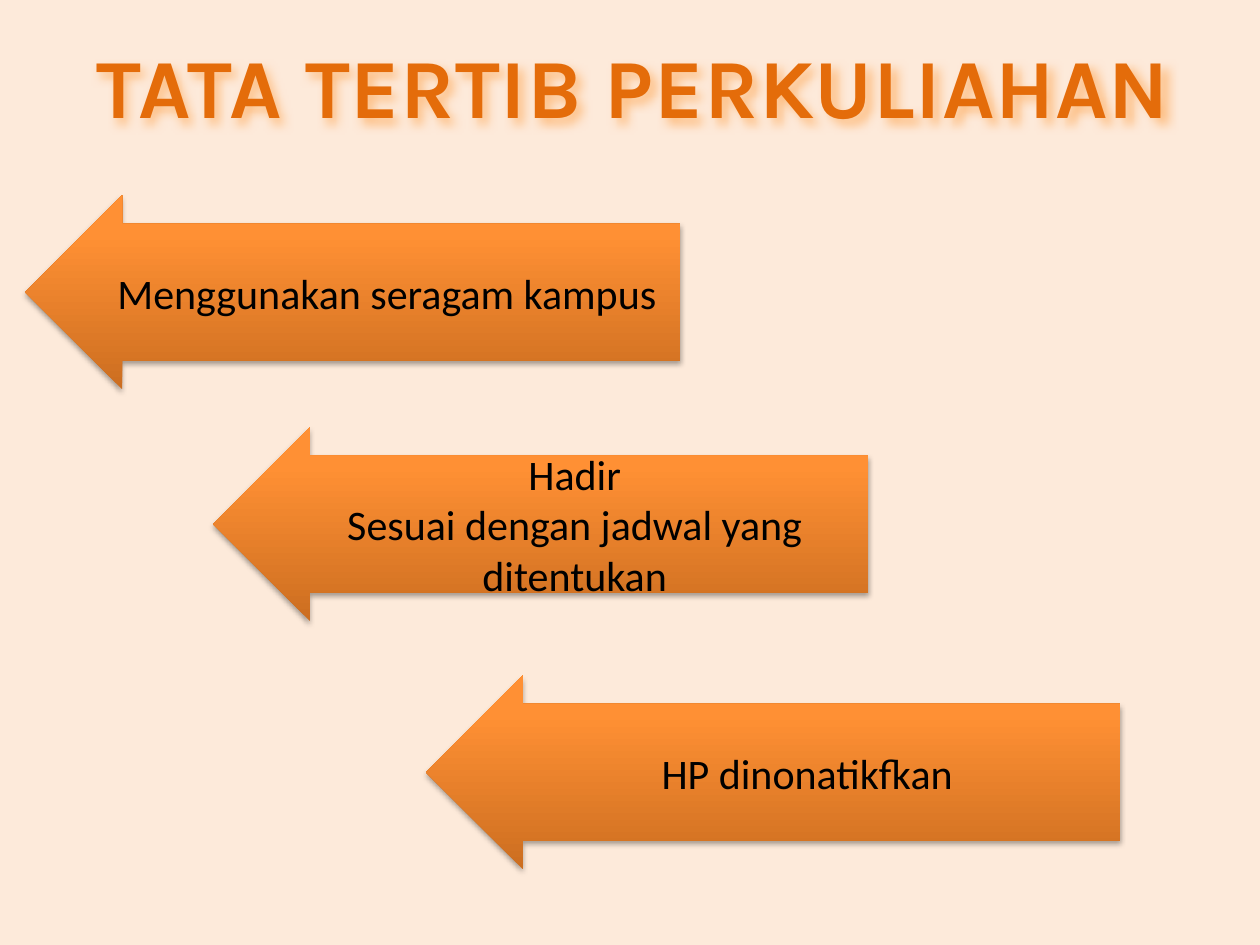
import dataclasses

import pptx
import pptx.dml.color
import pptx.enum.shapes
import pptx.enum.text
import pptx.oxml
import pptx.oxml.ns
import pptx.util

Inches = pptx.util.Inches
Pt = pptx.util.Pt


@dataclasses.dataclass(frozen=True)
class Theme:
    """Colours, fonts and type sizes of the slide."""
    background: str = "FDEADA"
    title: str = "E46C0A"
    title_glow: str = "FFB066"
    text: str = "000000"
    shadow: str = "000000"
    gradient: tuple = ((0, "CC6E20"), (80, "FF9034"), (100, "FF9136"))
    title_font: str = "Karla"
    body_font: str = "Calibri"
    title_size: int = 48
    body_size: int = 24


THEME = Theme()
RULES = (
    ((0.2, 1.55, 5.2, 1.54), "Menggunakan seragam kampus"),
    ((1.69, 3.39, 5.2, 1.54), "Hadir\nSesuai dengan jadwal yang ditentukan"),
    ((3.38, 5.36, 5.51, 1.54), "HP dinonatikfkan"),
)


def rgb(value):
    """Return a colour from its hex value."""
    return pptx.dml.color.RGBColor.from_string(value)


def add_effect(sp, color, alpha, blur, dist, angle):
    """Give a shape an outer shadow, with lengths in points."""
    sp.shadow.inherit = False
    effects = sp._element.spPr.find(pptx.oxml.ns.qn("a:effectLst"))
    effects.append(pptx.oxml.parse_xml(
        f'<a:outerShdw {pptx.oxml.ns.nsdecls("a")} blurRad="{Pt(blur)}" '
        f'dist="{Pt(dist)}" dir="{angle * 60000}" rotWithShape="0">'
        f'<a:srgbClr val="{color}"><a:alpha val="{alpha * 1000}"/></a:srgbClr>'
        '</a:outerShdw>'))


def fill_gradient(sp, stops, angle):
    """Fill a shape with a linear gradient."""
    sp.fill.gradient()
    grad = sp._element.spPr.find(pptx.oxml.ns.qn("a:gradFill"))
    marks = "".join(f'<a:gs pos="{pos * 1000}"><a:srgbClr val="{color}"/></a:gs>'
                    for pos, color in stops)
    grad.getparent().replace(grad, pptx.oxml.parse_xml(
        f'<a:gradFill {pptx.oxml.ns.nsdecls("a")} rotWithShape="1">'
        f'<a:gsLst>{marks}</a:gsLst>'
        f'<a:lin ang="{angle * 60000}" scaled="0"/></a:gradFill>'))


def set_text(sp, text, font, size, color, bold=False):
    """Write centred text into a shape and format it."""
    tf = sp.text_frame
    tf.text = text
    tf.word_wrap = True
    tf.vertical_anchor = pptx.enum.text.MSO_ANCHOR.MIDDLE
    for p in tf.paragraphs:
        p.alignment = pptx.enum.text.PP_ALIGN.CENTER
        for r in p.runs:
            r.font.name = font
            r.font.size = Pt(size)
            r.font.bold = bold
            r.font.color.rgb = rgb(color)


def add_title(s, box, text):
    """Place the glowing slide title in its box."""
    sp = s.shapes.add_textbox(*map(Inches, box))
    set_text(sp, text, THEME.title_font, THEME.title_size, THEME.title, True)
    for r in sp.text_frame.paragraphs[0].runs:
        r.font._element.set("spc", "50")
    add_effect(sp, THEME.title_glow, 75, 6, 3, 50)


def add_rule(s, box, text):
    """Place one rule as a left arrow filling its box."""
    sp = s.shapes.add_shape(
        pptx.enum.shapes.MSO_SHAPE.LEFT_ARROW, *map(Inches, box))
    sp.adjustments[0] = 0.706
    sp.adjustments[1] = 0.5
    fill_gradient(sp, THEME.gradient, 270)
    sp.line.fill.background()
    add_effect(sp, THEME.shadow, 35, 3.1, 1.8, 90)
    set_text(sp, text, THEME.body_font, THEME.body_size, THEME.text)


def main():
    """Build the slide and save it."""
    prs = pptx.Presentation()
    prs.slide_width, prs.slide_height = Inches(10), Inches(7.5)
    s = prs.slides.add_slide(prs.slide_layouts[6])
    s.background.fill.solid()
    s.background.fill.fore_color.rgb = rgb(THEME.background)
    add_title(s, (0.28, 0.05, 9.5, 1.25), "TATA TERTIB PERKULIAHAN")
    for box, text in RULES:
        add_rule(s, box, text)
    prs.save("out.pptx")


if __name__ == "__main__":
    main()
